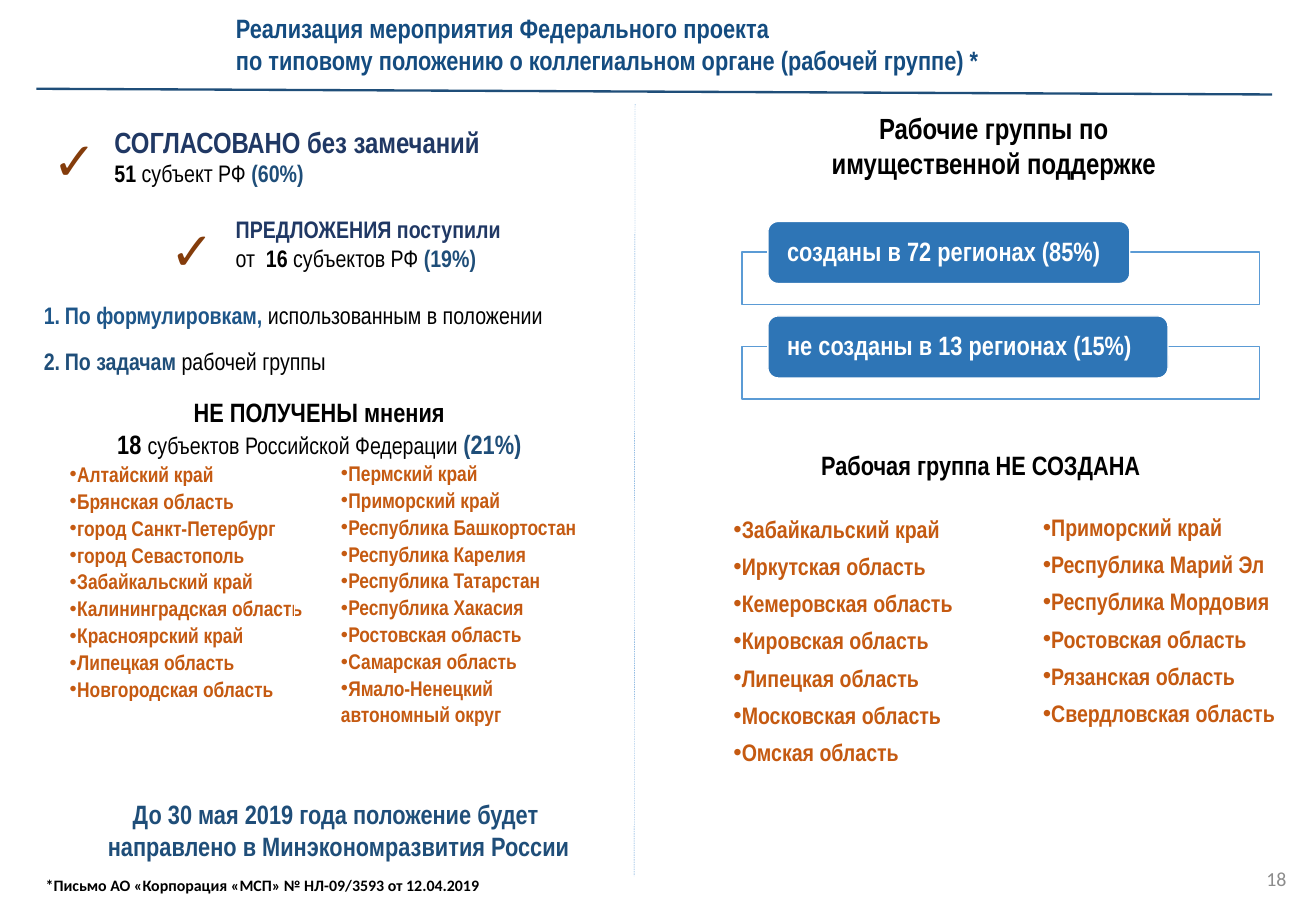
import pptx
import pptx.util
import pptx.dml.color
import pptx.enum.dml
import pptx.enum.shapes
import pptx.enum.text
import pptx.oxml
import pptx.oxml.ns

Inches = pptx.util.Inches
Pt = pptx.util.Pt
Align = pptx.enum.text.PP_ALIGN
Anchor = pptx.enum.text.MSO_ANCHOR
Shape = pptx.enum.shapes.MSO_SHAPE

HUES = {
    "title": "144C80", "navy": "203864", "blue": "1F4E79", "number": "1E5689",
    "sky": "5B9BD5", "chip": "2E75B6", "brown": "843C0B", "rust": "C55A11",
    "black": "000000", "white": "FFFFFF", "grey": "8C8C8C",
}
FACE = "Arial Narrow"
DOT = '<a:buChar {} char="•"/>'
COUNT = '<a:buAutoNum {} type="arabicPeriod"/>'
LIST = {"line_spacing": 1.3}


def assign(item, values):
    for name, value in values.items():
        setattr(item, name, value)


def make(xml):
    return pptx.oxml.parse_xml(xml.format(pptx.oxml.ns.nsdecls("a")))


def hue(name):
    return pptx.dml.color.RGBColor.from_string(HUES[name])


class Board:
    def __init__(self, deck, layout):
        self.slide = deck.slides.add_slide(deck.slide_layouts[layout])
        self.shapes = self.slide.shapes

    def letter(self, frame, rows, look=None, mark=None, indent=(0, 0), face=FACE):
        for at, runs in enumerate(rows):
            para = frame.paragraphs[0] if at == 0 else frame.add_paragraph()
            assign(para, {"space_before": Pt(0), "alignment": Align.LEFT, **(look or {})})
            if at == 0:
                para.space_before = Pt(0)
            props = para._p.get_or_add_pPr()
            props.set("marL", str(Inches(indent[0])))
            props.set("indent", str(Inches(indent[1])))
            if mark:
                props.append(make(mark))
            for text, size, tint, bold in runs:
                run = para.add_run()
                run.text = text
                assign(run.font, {"size": Pt(size), "name": face, "bold": bold})
                run.font.color.rgb = hue(tint)

    def fit(self, box, place, rows, anchor=Anchor.TOP, **style):
        sides = ("left", "top", "width", "height")
        assign(box, dict(zip(sides, map(Inches, place))))
        assign(box.text_frame, {
            "word_wrap": True, "vertical_anchor": anchor,
            "auto_size": pptx.enum.text.MSO_AUTO_SIZE.NONE,
        })
        self.letter(box.text_frame, rows, **style)

    def text(self, place, rows, **style):
        box = self.shapes.add_textbox(*map(Inches, place))
        self.fit(box, place, rows, **style)

    def list(self, slot, place, names):
        rows = [[(name, 18, "rust", True)] for name in names]
        self.fit(self.slide.placeholders[slot], place, rows,
                 look=LIST, mark=DOT, indent=(0.28, 0.2))

    def line(self, start, end, tint, width, dash=None):
        kind = pptx.enum.shapes.MSO_CONNECTOR.STRAIGHT
        line = self.shapes.add_connector(kind, *map(Inches, start + end))
        line.line.color.rgb = hue(tint)
        assign(line.line, {"width": Pt(width), "dash_style": dash})
        line._element.spPr.append(make("<a:effectLst {}/>"))

    def block(self, kind, place, fill, edge):
        block = self.shapes.add_shape(kind, *map(Inches, place))
        block.shadow.inherit = False
        block.fill.solid()
        block.fill.fore_color.rgb = hue(fill)
        block.line.color.rgb = hue(edge)
        block.line.width = Pt(1)
        return block

    def chip(self, top, width, label):
        self.block(Shape.RECTANGLE, (7.77, top + 0.32, 5.42, 0.55), "white", "sky")
        place = (8.04, top, width, 0.65)
        chip = self.block(Shape.ROUNDED_RECTANGLE, place, "chip", "white")
        assign(chip.text_frame, {
            "margin_left": Inches(0.17), "margin_right": Inches(0.17),
            "margin_top": 0, "margin_bottom": 0,
        })
        self.fit(chip, place, [[(label, 20, "white", True)]],
                 anchor=Anchor.MIDDLE, look={"line_spacing": 0.9})

    def table(self, place, names, heights):
        frame = self.shapes.add_table(len(heights), 1, *map(Inches, place))
        table = frame.table
        assign(table, {"first_row": False, "horz_banding": False})
        for at, height in enumerate(heights):
            table.rows[at].height = Inches(height)
            cell = table.cell(at, 0)
            assign(cell, {
                "margin_left": Inches(0.01), "margin_right": Inches(0.01),
                "margin_top": Inches(0.01), "margin_bottom": 0,
            })
            cell.fill.background()
            props = cell._tc.get_or_add_tcPr()
            for spot, side in enumerate("LRTB"):
                props.insert(spot, make(
                    f'<a:ln{side} {{}} w="12700"><a:solidFill>'
                    f'<a:srgbClr val="{HUES["white"]}"/></a:solidFill></a:ln{side}>'))
            if at < len(names):
                rows = [[(part, 16, "rust", True)] for part in names[at].split("\n")]
                self.letter(cell.text_frame, rows, look=LIST, indent=(0.28, 0.2))
                first = cell.text_frame.paragraphs[0]
                first._p.get_or_add_pPr().append(make(DOT))


def main():
    deck = pptx.Presentation()
    assign(deck, {"slide_width": Inches(13.78), "slide_height": Inches(9.45)})
    board = Board(deck, 3)
    center = {"alignment": Align.CENTER}

    board.line((6.65, 1.09), (6.64, 9.18), "sky", 0.25, pptx.enum.dml.MSO_LINE.DASH)
    board.line((0.38, 0.93), (13.32, 0.99), "blue", 1.75)
    board.fit(board.shapes.title, (2.37, 0.08, 9.55, 0.77), [
        [("Реализация мероприятия Федерального проекта", 20, "title", True)],
        [("по типовому положению о коллегиальном органе (рабочей группе) *",
          20, "title", True)],
    ])
    board.text((10.47, 8.95, 3.1, 0.5), [[("18", 15, "grey", False)]],
               anchor=Anchor.MIDDLE, look={"alignment": Align.RIGHT}, face="Calibri")
    board.text((0.45, 8.31, 6.19, 0.77), [
        [("До 30 мая 2019 года положение будет ", 20, "blue", True)],
        [("направлено в Минэкономразвития России", 20, "blue", True)],
    ], look=center)
    board.text((1.1, 1.25, 5.52, 0.77), [
        [("СОГЛАСОВАНО без замечаний", 22, "navy", True)],
        [("51 ", 18, "black", True), ("субъект РФ ", 18, "black", False),
         ("(60%)", 18, "blue", True)],
    ])
    board.text((2.37, 2.2, 3.56, 0.77), [
        [("ПРЕДЛОЖЕНИЯ поступили", 18, "navy", True)],
        [("от ", 18, "black", False), (" 16", 18, "black", True),
         (" субъектов РФ ", 18, "black", False), ("(19%)", 18, "blue", True)],
    ])
    for left, top in ((0.45, 1.29), (1.68, 2.23)):
        board.text((left, top, 0.72, 0.77), [[("✓", 40, "brown", False)]])
    board.text((0.36, 3.1, 5.82, 0.9), [
        [("По формулировкам, ", 18, "number", True),
         ("использованным в положении", 18, "black", False)],
        [("По задачам ", 18, "blue", True), ("рабочей группы", 18, "black", False)],
    ], look={"space_before": Pt(13)}, mark=COUNT, indent=(0.22, -0.22))
    board.text((0.1, 4.1, 6.55, 0.77), [
        [("НЕ ПОЛУЧЕНЫ мнения ", 20, "black", True)],
        [("18 ", 20, "black", True),
         ("субъектов Российской Федерации ", 18, "black", False),
         ("(21%) ", 20, "blue", True)],
    ], look=center)
    board.text((8.18, 1.11, 4.45, 0.84), [
        [("Рабочие группы по имущественной поддержке", 22, "black", True)],
    ], look=center)
    board.chip(2.32, 3.79, "созданы в 72 регионах (85%)")
    board.chip(3.31, 4.19, "не созданы в 13 регионах (15%)")
    board.text((8.22, 4.56, 5.22, 0.54), [
        [("Рабочая группа НЕ СОЗДАНА", 20, "black", True)],
    ], look=LIST, indent=(0.28, 0))
    board.list(1, (7.1, 5.25, 3.24, 2.86), (
        "Забайкальский край", "Иркутская область", "Кемеровская область",
        "Кировская область", "Липецкая область", "Московская область",
        "Омская область"))
    board.list(2, (10.34, 5.23, 3.4, 2.46), (
        "Приморский край", "Республика Марий Эл", "Республика Мордовия",
        "Ростовская область", "Рязанская область", "Свердловская область"))
    board.table((0.24, 4.82, 3.11, 3.57), (
        "Алтайский край", "Брянская область", "город Санкт-Петербург",
        "город Севастополь", "Забайкальский край", "Калининградская область",
        "Красноярский край", "Липецкая область", "Новгородская область"),
        [0.27] * 10)
    board.table((3.08, 4.81, 3.48, 3.56), (
        "Пермский край", "Приморский край", "Республика Башкортостан",
        "Республика Карелия", "Республика Татарстан", "Республика Хакасия",
        "Ростовская область", "Самарская область",
        "Ямало-Ненецкий\nавтономный округ"),
        [0.28] * 8 + [0.54])
    board.text((0.38, 9.12, 5.33, 0.3), [
        [("*Письмо АО «Корпорация «МСП» № НЛ-09/3593 от 12.04.2019",
          12, "black", True)],
    ], face="Calibri")
    deck.save("out.pptx")


if __name__ == "__main__":
    main()
